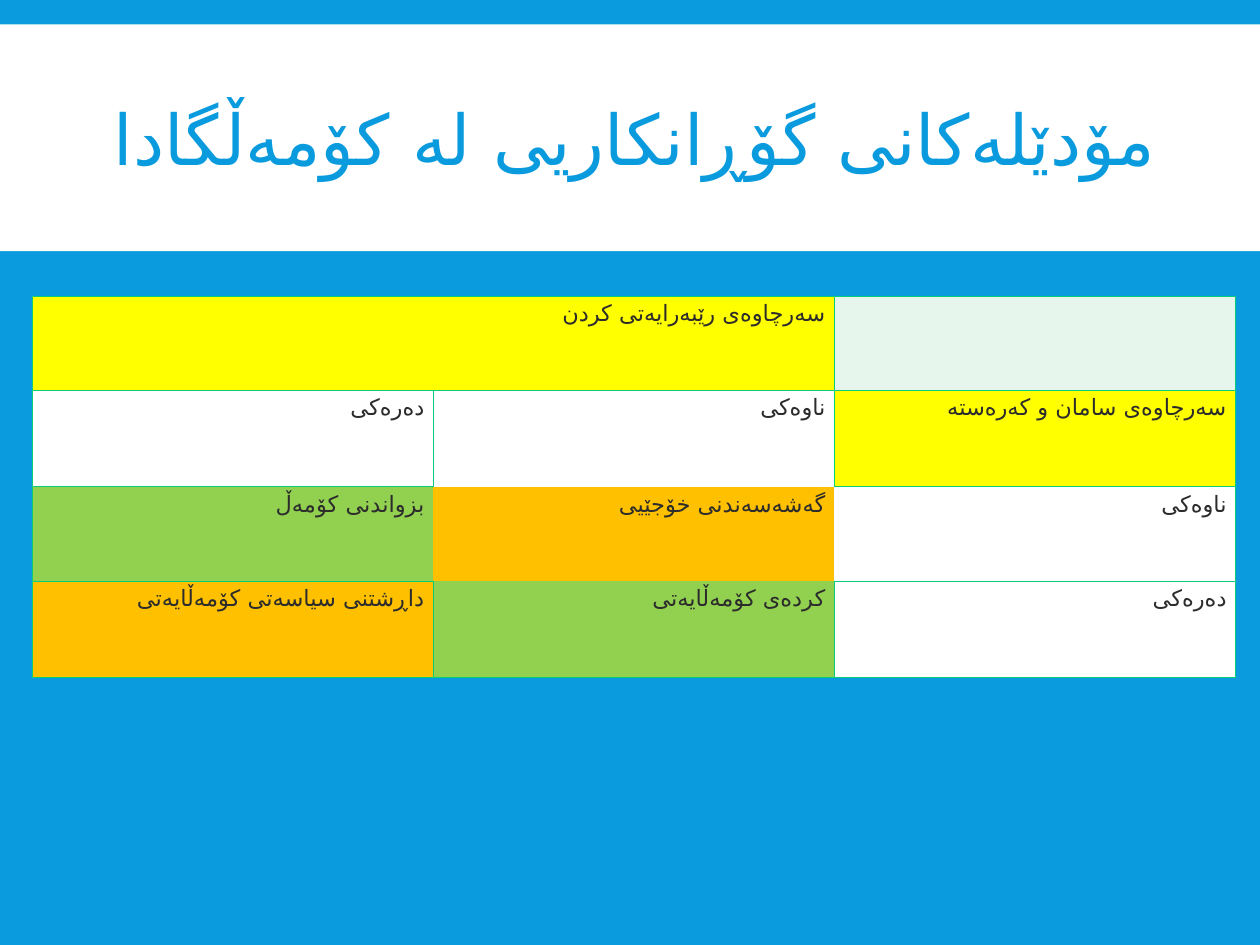
from lxml import etree
from pptx import Presentation
from pptx import util as u
from pptx.dml.color import RGBColor
from pptx.enum import shapes, text
from pptx.oxml import ns

THEME = {
    "font": "Calibri", "script_font": "DejaVu Sans", "title": 56, "body": 18, "border": 1,
    "blue": "099BDD", "ink": "2C2C2C", "white": "FFFFFF", "line": "08CC78",
    "yellow": "FFFF00", "pale": "E7F6EC", "green": "92D050", "orange": "FFC000",
}
TITLE = "مۆدێلەکانی گۆڕانکاریی لە کۆمەڵگادا"
ROWS = [
    [("سەرچاوەی رێبەرایەتی کردن", "yellow"), ("", "yellow"), ("", "pale")],
    [("دەرەکی", "white"), ("ناوەکی", "white"), ("سەرچاوەی سامان و کەرەستە", "yellow")],
    [("بزواندنی کۆمەڵ", "green"), ("گەشەسەندنی خۆجێیی", "orange"), ("ناوەکی", "white")],
    [("داڕشتنی سیاسەتی کۆمەڵایەتی", "orange"), ("کردەی کۆمەڵایەتی", "green"), ("دەرەکی", "white")],
]
HEIGHTS = [2.66, 2.72, 2.66, 2.72]
COLUMN = 11.32
BORDERLESS = (2, 1)
SIDES = {"L": (0, -1), "R": (0, 1), "T": (-1, 0), "B": (1, 0)}


def color(name):
    return RGBColor.from_string(THEME[name])


def paint(shape, name):
    shape.fill.solid()
    shape.fill.fore_color.rgb = color(name)


def write(tf, words, size, name):
    tf.text = words
    p = tf.paragraphs[0]
    p.alignment = text.PP_ALIGN.RIGHT
    p._p.get_or_add_pPr().set("rtl", "1")
    for r in p.runs:
        r.font.size = u.Pt(THEME[size])
        r.font.name = THEME["font"]
        r.font.color.rgb = color(name)
        cs = etree.SubElement(r.font._element, ns.qn("a:cs"))
        cs.set("typeface", THEME["script_font"])
    return p


def add_borders(cell, row, col):
    tcPr = cell._tc.get_or_add_tcPr()
    for i, (side, (dr, dc)) in enumerate(SIDES.items()):
        ln = etree.Element(ns.qn("a:ln" + side), w=str(u.Pt(THEME["border"])))
        if BORDERLESS in ((row, col), (row + dr, col + dc)):
            etree.SubElement(ln, ns.qn("a:noFill"))
        else:
            fill = etree.SubElement(ln, ns.qn("a:solidFill"))
            etree.SubElement(fill, ns.qn("a:srgbClr"), val=THEME["line"])
        tcPr.insert(i, ln)


def main():
    prs = Presentation()
    prs.slide_width, prs.slide_height = u.Cm(35.56), u.Cm(26.67)
    s = prs.slides.add_slide(prs.slide_layouts[5])
    paint(s.background, "blue")

    band = s.shapes.add_shape(shapes.MSO_SHAPE.RECTANGLE, 0, u.Cm(0.69), prs.slide_width, u.Cm(6.4))
    band.shadow.inherit = False
    paint(band, "white")
    band.line.fill.background()

    title = s.shapes.title
    title.element.addprevious(band.element)
    title.left, title.top, title.width, title.height = map(u.Cm, (2.67, 1.12, 30.23, 5.87))
    tf = title.text_frame
    tf.word_wrap = True
    tf.auto_size = text.MSO_AUTO_SIZE.NONE
    tf.vertical_anchor = text.MSO_ANCHOR.MIDDLE
    write(tf, TITLE, "title", "blue").line_spacing = 0.85

    columns = len(ROWS[0])
    table = s.shapes.add_table(len(ROWS), columns, u.Cm(0.91), u.Cm(8.36),
                               u.Cm(COLUMN * columns), u.Cm(sum(HEIGHTS))).table
    table.first_row = table.horz_banding = False
    for column in table.columns:
        column.width = u.Cm(COLUMN)
    for i, (cells, height) in enumerate(zip(ROWS, HEIGHTS)):
        table.rows[i].height = u.Cm(height)
        for j, (words, fill) in enumerate(cells):
            cell = table.cell(i, j)
            paint(cell, fill)
            add_borders(cell, i, j)
            if words:
                write(cell.text_frame, words, "body", "ink")
    table.cell(0, 0).merge(table.cell(0, 1))

    prs.save("out.pptx")


if __name__ == "__main__":
    main()
